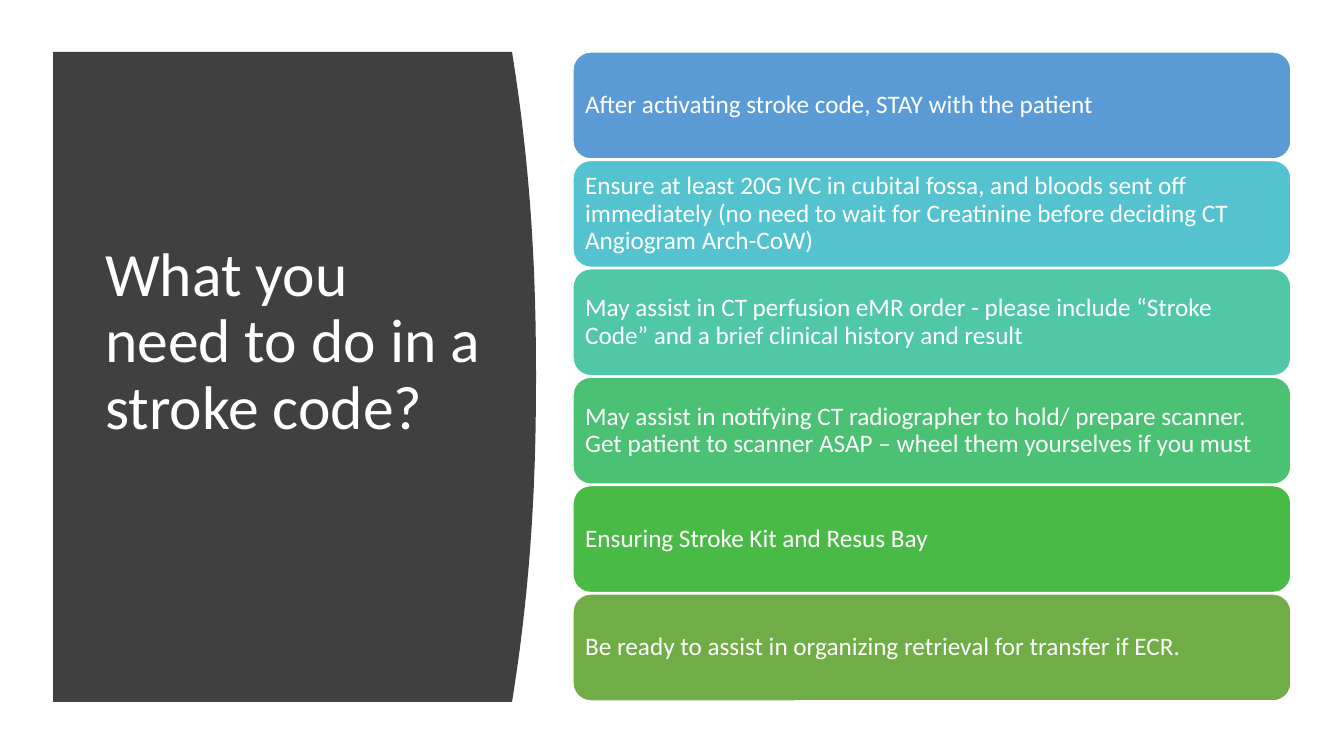
from pptx import Presentation
from pptx.dml.color import RGBColor
from pptx.enum.shapes import MSO_SHAPE
from pptx.enum.text import MSO_ANCHOR, MSO_AUTO_SIZE, PP_ALIGN
from pptx.util import Pt

ROUNDED = MSO_SHAPE.ROUNDED_RECTANGLE
MIDDLE = MSO_ANCHOR.MIDDLE
LEFT = PP_ALIGN.LEFT
NO_AUTOFIT = MSO_AUTO_SIZE.NONE

EMU_PER_PX = 914400 / 100.8
TITLE_ONLY = 5

COLORS = {
    "panel": "404040",
    "white": "FFFFFF",
    "blue": "5B9BD5",
    "cyan": "55C3CF",
    "teal": "50C8A7",
    "mint": "4BC174",
    "green": "4ABA46",
    "olive": "70AD47",
}

STEPS = [
    ("blue", "After activating stroke code, STAY with the patient"),
    ("cyan", "Ensure at least 20G IVC in cubital fossa, and bloods sent off immediately "
             "(no need to wait for Creatinine before deciding CT Angiogram Arch-CoW)"),
    ("teal", "May assist in CT perfusion eMR order - please include “Stroke Code” "
             "and a brief clinical history and result"),
    ("mint", "May assist in notifying CT radiographer to hold/ prepare scanner. "
             "Get patient to scanner ASAP – wheel them yourselves if you must"),
    ("green", "Ensuring Stroke Kit and Resus Bay"),
    ("olive", "Be ready to assist in organizing retrieval for transfer if ECR."),
]


def px(length):
    return round(length * EMU_PER_PX)


def rgb(name):
    return RGBColor.from_string(COLORS[name])


def write_text(frame, text, size, color="white", font="Calibri", inset=None):
    frame.word_wrap = True
    frame.auto_size = NO_AUTOFIT
    frame.vertical_anchor = MIDDLE
    if inset is not None:
        frame.margin_left = frame.margin_right = px(inset)
        frame.margin_top = frame.margin_bottom = px(inset)
    paragraph = frame.paragraphs[0]
    paragraph.text = text
    paragraph.alignment = LEFT
    paragraph.line_spacing = 0.9
    paragraph.font.size = Pt(size)
    paragraph.font.name = font
    paragraph.font.color.rgb = rgb(color)


def add_panel(slide, left, top, right, bottom, bulge, segments=48):
    middle, half = (top + bottom) / 2, (bottom - top) / 2
    curve = []
    for step in range(segments + 1):
        y = top + (bottom - top) * step / segments
        reach = 1 - (abs(y - middle) / half) ** 2.2
        curve.append((px(right + bulge * reach), px(y)))
    builder = slide.shapes.build_freeform(px(left), px(top))
    builder.add_line_segments(curve + [(px(left), px(bottom))], close=True)
    panel = builder.convert_to_shape()
    panel.shadow.inherit = False
    panel.fill.solid()
    panel.fill.fore_color.rgb = rgb("panel")
    panel.line.fill.background()


def place_title(slide, text, left, top, width, height):
    title = slide.shapes.title
    title.left, title.top = px(left), px(top)
    title.width, title.height = px(width), px(height)
    write_text(title.text_frame, text, size=44)


def add_step(slide, text, color, left, top, width, height):
    card = slide.shapes.add_shape(ROUNDED, px(left), px(top), px(width), px(height))
    card.shadow.inherit = False
    card.fill.solid()
    card.fill.fore_color.rgb = rgb(color)
    card.line.color.rgb = rgb("white")
    card.line.width = Pt(1)
    write_text(card.text_frame, text, size=18, inset=7)


def main():
    deck = Presentation()
    deck.slide_width, deck.slide_height = px(1344), px(756)
    slide = deck.slides.add_slide(deck.slide_layouts[TITLE_ONLY])

    add_panel(slide, left=53, top=52, right=512, bottom=702, bulge=24)
    place_title(slide, "What you need to do in a stroke code?",
                left=95, top=112, width=398, height=462)
    panel_tree = slide.shapes.title.element.getparent()
    panel_tree.append(slide.shapes.title.element)

    first_top, last_top = 52, 594
    pitch = (last_top - first_top) / (len(STEPS) - 1)
    for index, (color, text) in enumerate(STEPS):
        add_step(slide, text, color, left=573, top=first_top + index * pitch,
                 width=718, height=107)

    deck.save("out.pptx")


if __name__ == "__main__":
    main()
